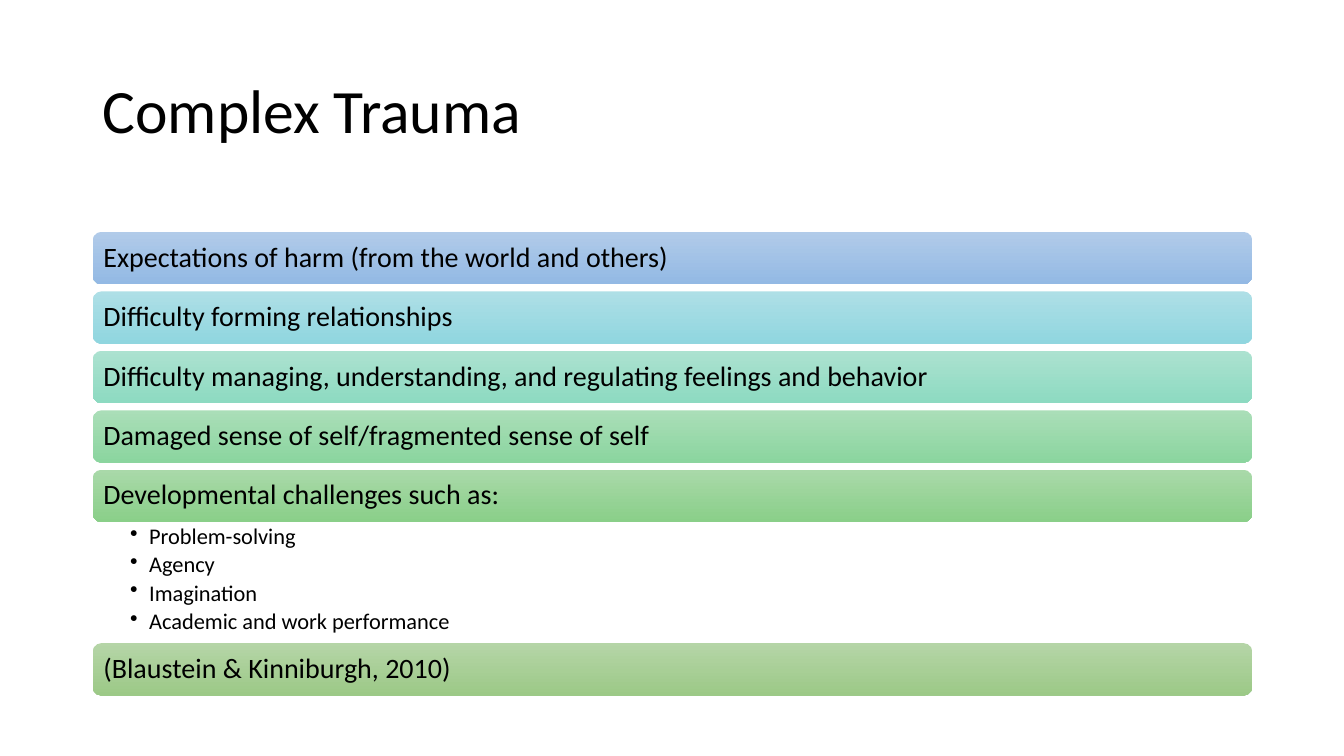
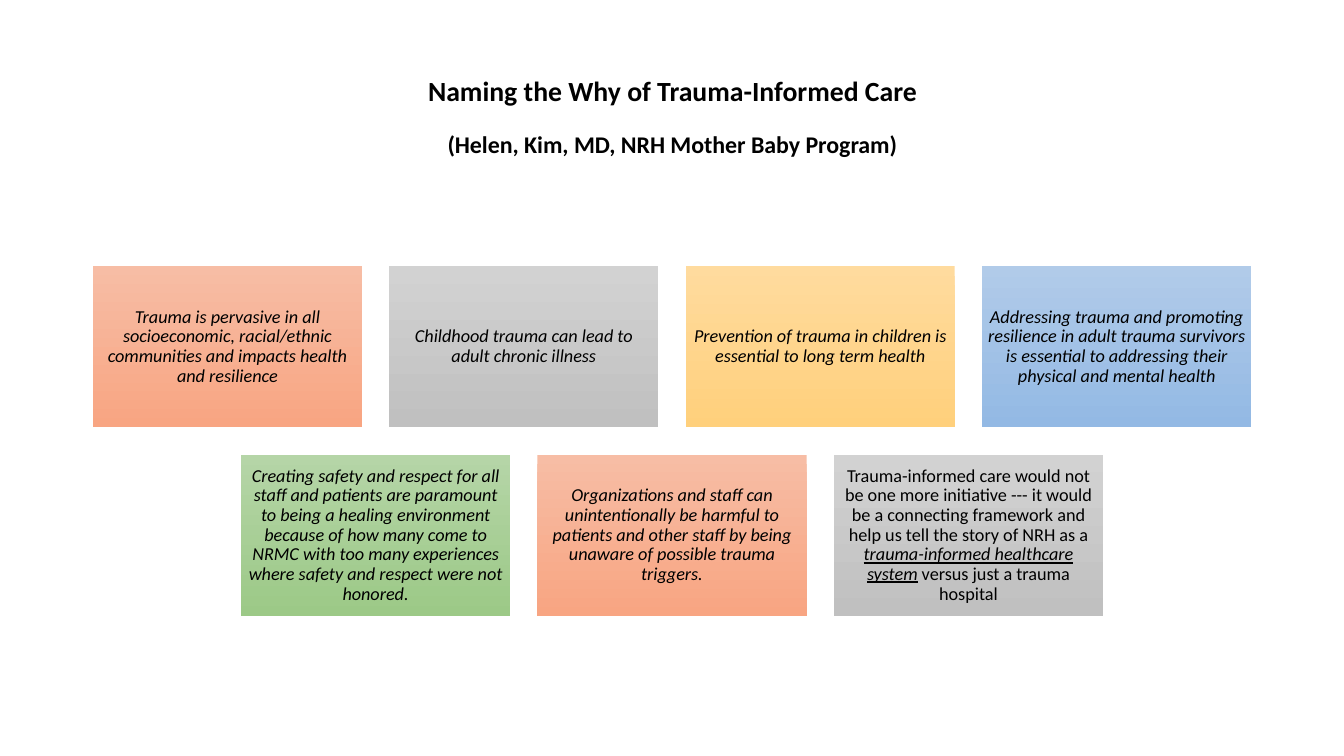
from lxml import etree
from pptx import Presentation
from pptx.dml.color import RGBColor
from pptx.enum import shapes, text
from pptx.oxml.ns import qn
from pptx.util import Inches, Pt

# Content
TITLE = "Complex Trauma"
BANDS = [
    ("Expectations of harm (from the world and others)", "blue", []),
    ("Difficulty forming relationships", "aqua", []),
    ("Difficulty managing, understanding, and regulating feelings and behavior",
     "teal", []),
    ("Damaged sense of self/fragmented sense of self", "mint", []),
    ("Developmental challenges such as:", "leaf",
     ["Problem-solving", "Agency", "Imagination",
      "Academic and work performance"]),
    ("(Blaustein & Kinniburgh, 2010)", "green", []),
]
HEADS = [[("Naming the Why of Trauma-Informed Care", {"size": 19.8})],
         [("(Helen, Kim, MD, NRH Mother Baby Program)", {"size": 17.1})]]
CARDS = [
    [("Trauma is pervasive in all socioeconomic, racial/ethnic communities "
      "and impacts health and resilience", "coral"),
     ("Childhood trauma can lead to adult chronic illness", "gray"),
     ("Prevention of trauma in children is essential to long term health",
      "gold"),
     ("Addressing trauma and promoting resilience in adult trauma survivors "
      "is essential to addressing their physical and mental health", "blue")],
    [("Creating safety and respect for all staff and patients are paramount "
      "to being a healing environment because of how many come to NRMC with "
      "too many experiences where safety and respect were not honored.",
      "green"),
     ("Organizations and staff can unintentionally be harmful to patients "
      "and other staff by being unaware of possible trauma triggers.",
      "coral"),
     ([("Trauma-informed care would not be one more initiative --- it would "
        "be a connecting framework and help us tell the story of NRH as a ",
        {"italic": False}),
       ("trauma-informed healthcare system", {"underline": True}),
       (" versus just a trauma hospital", {"italic": False})], "gray")],
]

# Shared look
FONT, INK = "Calibri", "000000"
FILLS = {  # top and bottom of each gradient
    "blue": ("B1CBE9", "93B9E4"), "aqua": ("AEDFE6", "90D6DF"),
    "teal": ("ACE2D0", "8DDAC1"), "mint": ("AADEB8", "8BD59F"),
    "leaf": ("A9D9A9", "8ACF89"), "green": ("B5D5A7", "9CC987"),
    "coral": ("F7BDA5", "F8A582"), "gray": ("D2D2D2", "C0C0C0"),
    "gold": ("FFDB9E", "FFD07C"),
}
WIDE, HIGH = 13.33, 7.5
LEFT, WIDTH = 0.92, 11.5
ALIGN, ANCHOR = text.PP_ALIGN, text.MSO_ANCHOR
BOX = shapes.MSO_SHAPE


def write(shape, paras, size=20, align=ALIGN.LEFT, anchor=ANCHOR.MIDDLE,
          pad=(0.1, 0.05, 0.1, 0.05), after=0, bullet=False, **style):
    """Fill a shape with paragraphs: strings or lists of (text, style)."""
    frame = shape.text_frame
    frame.word_wrap, frame.vertical_anchor = True, anchor
    (frame.margin_left, frame.margin_top,
     frame.margin_right, frame.margin_bottom) = map(Inches, pad)
    for n, runs in enumerate(paras):
        para = frame.add_paragraph() if n else frame.paragraphs[0]
        para.alignment, para.line_spacing = align, 0.9
        para.space_after = Pt(after)
        if bullet:
            props = para._p.get_or_add_pPr()
            props.set("marL", str(Inches(0.19)))
            props.set("indent", str(-Inches(0.19)))
            etree.SubElement(props, qn("a:buChar")).set("char", "•")
        for words, extra in [(runs, {})] if isinstance(runs, str) else runs:
            run = para.add_run()
            run.text = words
            look = {"size": size, **style, **extra}
            look["size"] = Pt(look["size"])
            run.font.name = FONT
            run.font.color.rgb = RGBColor.from_string(INK)
            for key, val in look.items():
                setattr(run.font, key, val)


def area(slide, *at):
    return slide.shapes.add_textbox(*map(Inches, at))


def panel(slide, kind, fill, *at):
    shape = slide.shapes.add_shape(kind, *map(Inches, at))
    shape.shadow.inherit = False
    shape.line.fill.background()
    shape.fill.gradient()
    shape.fill.gradient_angle = 270
    for stop, tone in zip(shape.fill.gradient_stops, FILLS[fill]):
        stop.color.rgb = RGBColor.from_string(tone)
    return shape


def title(slide, paras, top=0.4, **style):
    write(area(slide, LEFT, top, WIDTH, 1.45), paras, **style)


def bands(slide):
    tall, gap, top = 0.52, 0.07, 2.3
    for words, fill, notes in BANDS:
        bar = panel(slide, BOX.ROUNDED_RECTANGLE, fill,
                    LEFT, top, WIDTH, tall)
        write(bar, [words], pad=[0.08] * 4)
        top += tall
        if notes:
            write(area(slide, LEFT, top, WIDTH, 1.2), notes, size=16,
                  anchor=ANCHOR.TOP, pad=(0.37, 0.03, 0.16, 0.03),
                  after=3, bullet=True)
        top += 1.2 if notes else gap


def cards(slide):
    wide, tall, gap, top = 2.67, 1.6, 0.27, 2.64
    for r, row in enumerate(CARDS):
        start = (WIDE - len(row) * (wide + gap) + gap) / 2
        for c, (words, fill) in enumerate(row):
            card = panel(slide, BOX.RECTANGLE, fill, start + c * (wide + gap),
                         top + r * (tall + gap), wide, tall)
            write(card, [words], size=13, align=ALIGN.CENTER,
                  pad=[0.05] * 4, italic=True)


def main():
    deck = Presentation()
    deck.slide_width, deck.slide_height = Inches(WIDE), Inches(HIGH)
    first, second = (deck.slides.add_slide(deck.slide_layouts[6])
                     for _ in range(2))
    title(first, [TITLE], size=44)
    bands(first)
    title(second, HEADS, top=0.45, align=ALIGN.CENTER, after=18, bold=True)
    cards(second)
    deck.save("out.pptx")


if __name__ == "__main__":
    main()
